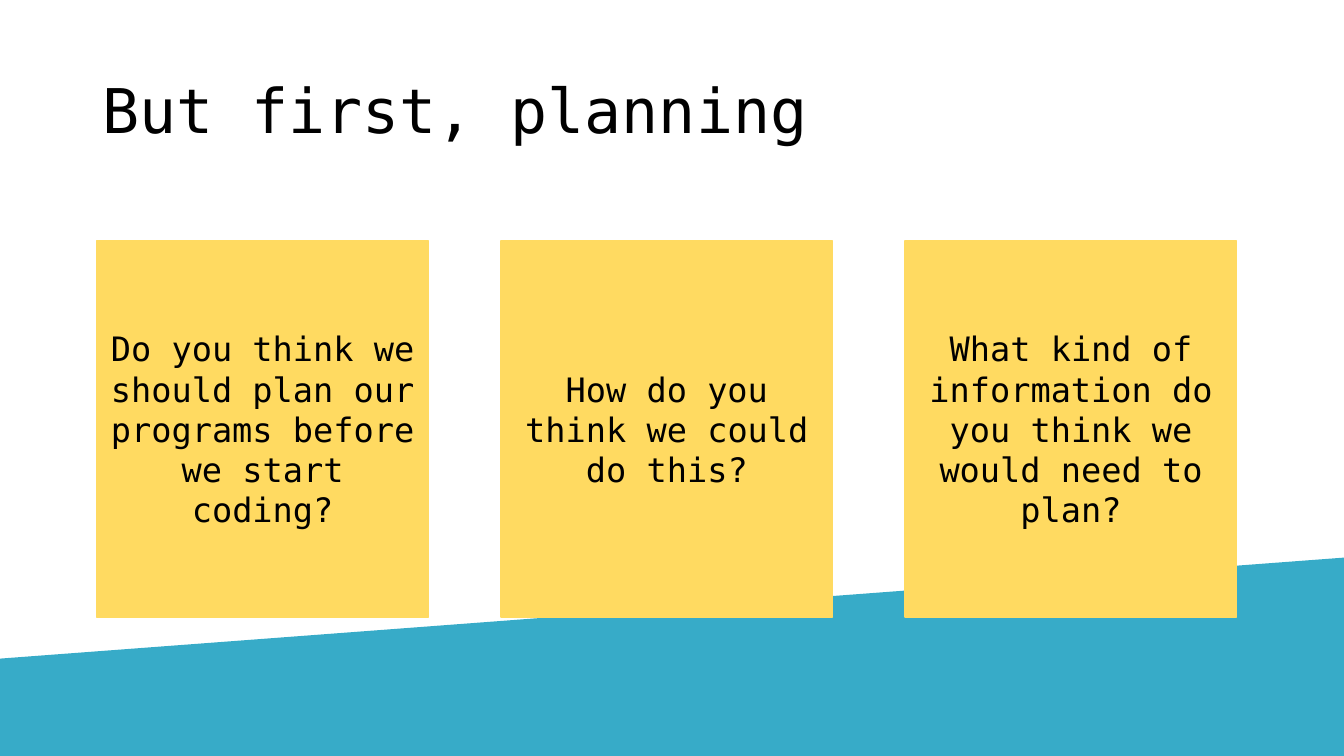
from dataclasses import dataclass

from pptx import Presentation
from pptx.dml.color import RGBColor as Color
from pptx.enum.shapes import MSO_SHAPE as Form
from pptx.enum.text import MSO_ANCHOR as Anchor, PP_ALIGN as Align
from pptx.shapes.autoshape import Shape
from pptx.slide import Slide
from pptx.util import Inches, Pt

WIDE, HIGH = Inches(13.33), Inches(7.5)
COLS, ROWS = 40, 30
FONT = "DejaVu Sans Mono"
BLUE = Color(0x37, 0xAB, 0xC8)
GOLD = Color(0xFF, 0xDA, 0x61)
BLACK = Color(0x00, 0x00, 0x00)

TITLE = "But first, planning"
ASKS = (
    "Do you think we should plan our programs before we start coding?",
    "How do you think we could do this?",
    "What kind of information do you think we would need to plan?",
)
FIRST, STEP = 2.88, 12.03


@dataclass(frozen=True)
class Box:
    col: float
    row: float
    cols: float
    rows: float

    def place(self) -> tuple[int, int, int, int]:
        return (
            round(self.col * WIDE / COLS),
            round(self.row * HIGH / ROWS),
            round(self.cols * WIDE / COLS),
            round(self.rows * HIGH / ROWS),
        )


@dataclass(frozen=True)
class Card:
    box: Box
    text: str


def write(shape: Shape, text: str, size: int, align: Align, pitch: float) -> None:
    frame = shape.text_frame
    frame.word_wrap = True
    frame.vertical_anchor = Anchor.MIDDLE
    line = frame.paragraphs[0]
    line.text = text
    line.alignment = align
    line.line_spacing = pitch
    line.font.name = FONT
    line.font.size = Pt(size)
    line.font.color.rgb = BLACK


def block(slide: Slide, box: Box, color: Color) -> Shape:
    shape = slide.shapes.add_shape(Form.RECTANGLE, *box.place())
    shape.shadow.inherit = False
    shape.fill.solid()
    shape.fill.fore_color.rgb = color
    shape.line.fill.background()
    return shape


def draw(slide: Slide, card: Card) -> None:
    shape = block(slide, card.box, GOLD)
    shape.line.color.rgb = GOLD
    shape.line.width = Pt(1)
    write(shape, card.text, 24, Align.CENTER, 1.0)


def main() -> None:
    deck = Presentation()
    deck.slide_width, deck.slide_height = WIDE, HIGH
    slide = deck.slides.add_slide(deck.slide_layouts[6])

    slope = block(slide, Box(0, 24.08, 41.4, 13.8), BLUE)
    slope.rotation = 355.7

    title = slide.shapes.add_textbox(*Box(2.76, 1.6, 34.5, 5.8).place())
    write(title, TITLE, 44, Align.LEFT, 0.9)

    for index, text in enumerate(ASKS):
        draw(slide, Card(Box(FIRST + index * STEP, 9.56, 9.87, 14.92), text))

    deck.save("out.pptx")


if __name__ == "__main__":
    main()
